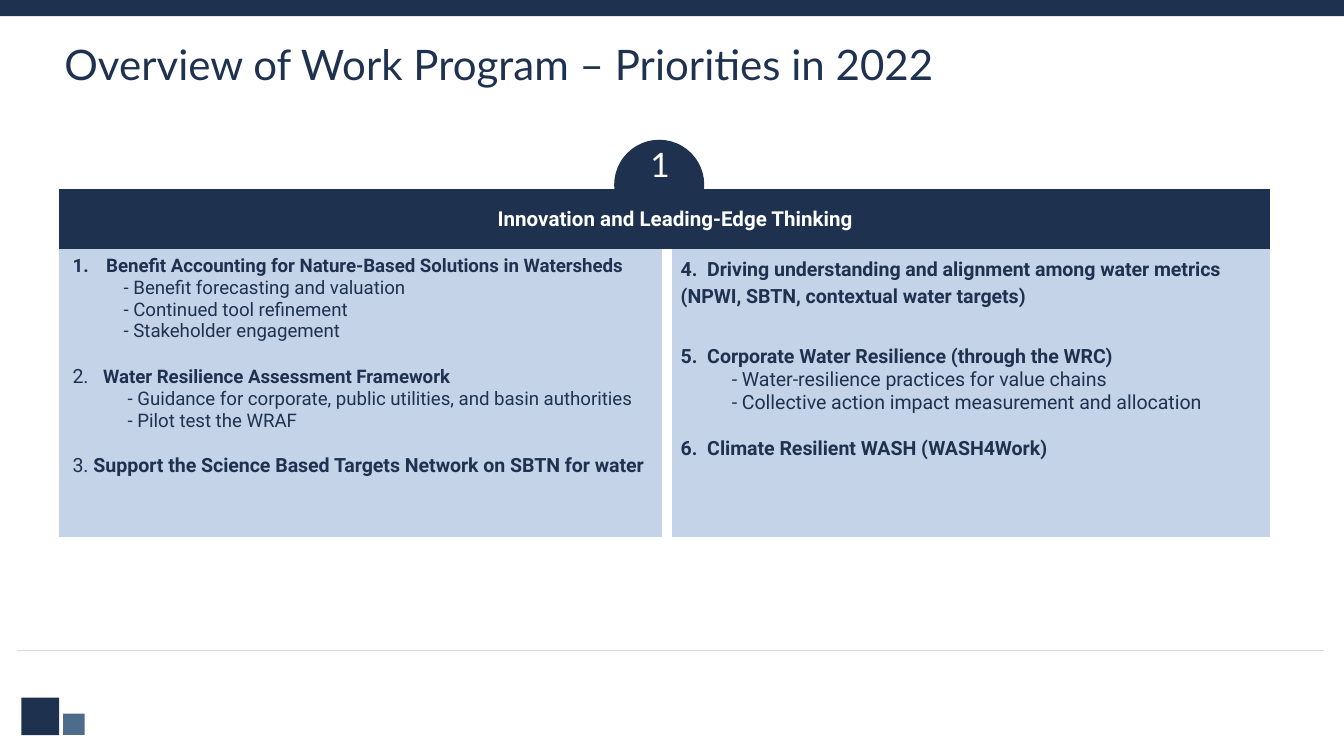
from lxml.etree import SubElement
from pptx import Presentation
from pptx.dml.color import RGBColor
from pptx.enum.shapes import MSO_CONNECTOR, MSO_SHAPE
from pptx.enum.text import MSO_ANCHOR, PP_ALIGN
from pptx.oxml.ns import qn
from pptx.util import Inches, Pt

COLORS = {
    "navy": "1E3250",
    "steel": "4D6B8B",
    "sky": "C5D3E9",
    "rule": "D9D9D9",
    "white": "FFFFFF",
}
GRID_COLUMNS = 100
GRID_ROWS = 56.25
PLAIN_TABLE = "{2D5ABB26-0587-4C30-8999-92F81FD0307C}"

SUBITEM = {"indent": 0.38}
DEEP_SUBITEM = {"indent": 0.41}
AFTER_GAP = {"space_before": 12.3}

LEFT_ITEMS = [
    ([("Benefit Accounting for Nature-Based Solutions in Watersheds", 10, True)],
     {"indent": 0.25, "hanging": 0.25, "numbered": True}),
    ([("- Benefit forecasting and valuation", 10, False)], SUBITEM),
    ([("- Continued tool refinement", 10, False)], SUBITEM),
    ([("- Stakeholder engagement", 10, False)], SUBITEM),
    ([("2.   ", 10.5, False), ("Water Resilience Assessment Framework", 10, True)],
     AFTER_GAP),
    ([("- Guidance for corporate, public utilities, and basin authorities", 10, False)],
     DEEP_SUBITEM),
    ([("- Pilot test the WRAF", 10, False)], DEEP_SUBITEM),
    ([("3. ", 10.5, False),
      ("Support the Science Based Targets Network on SBTN for water", 10.5, True)],
     AFTER_GAP),
]
RIGHT_ITEMS = [
    ([("4.  Driving understanding and alignment among water metrics "
       "(NPWI, SBTN, contextual water targets)", 10.5, True)],
     {"line_spacing": 1.15}),
    ([("5.  Corporate Water Resilience (through the WRC)", 10.5, True)],
     {"space_before": 20.2}),
    ([("- Water-resilience practices for value chains", 10.5, False)], SUBITEM),
    ([("- Collective action impact measurement and allocation", 10.5, False)], SUBITEM),
    ([("6.  Climate Resilient WASH (WASH4Work)", 10.5, True)], AFTER_GAP),
]


def color(name):
    return RGBColor.from_string(COLORS[name])


def apply(target, values):
    for name, value in values.items():
        setattr(target, name, value)


class SlideBuilder:
    def __init__(self, presentation):
        self.column = presentation.slide_width / GRID_COLUMNS
        self.row = presentation.slide_height / GRID_ROWS
        self.slide = presentation.slides.add_slide(presentation.slide_layouts[6])
        self.shapes = self.slide.shapes

    def place(self, left, top, width, height):
        return (round(left * self.column), round(top * self.row),
                round(width * self.column), round(height * self.row))

    def block(self, kind, box, fill):
        shape = self.shapes.add_shape(kind, *self.place(*box))
        shape.shadow.inherit = False
        shape.fill.solid()
        shape.fill.fore_color.rgb = color(fill)
        shape.line.fill.background()

    def rule(self, left, top, width):
        x, y, length, _ = self.place(left, top, width, 0)
        line = self.shapes.add_connector(MSO_CONNECTOR.STRAIGHT, x, y, x + length, y)
        line.line.color.rgb = color("rule")
        line.line.width = Pt(0.75)
        SubElement(line._element.spPr, qn("a:effectLst"))

    def runs(self, paragraph, runs, font, fill):
        for text, size, bold in runs:
            run = paragraph.add_run()
            run.text = text
            apply(run.font, {"name": font, "size": Pt(size), "bold": bold})
            run.font.color.rgb = color(fill)

    def label(self, box, text, size, fill, wrap=True, **paragraph_format):
        frame = self.shapes.add_textbox(*self.place(*box)).text_frame
        apply(frame, {"word_wrap": wrap, "vertical_anchor": MSO_ANCHOR.TOP})
        paragraph = frame.paragraphs[0]
        apply(paragraph, paragraph_format)
        self.runs(paragraph, [(text, size, False)], "Lato", fill)

    def paragraph(self, paragraph, runs, style, fill):
        properties = paragraph._p.get_or_add_pPr()
        properties.set("marL", str(Inches(style.get("indent", 0))))
        properties.set("indent", str(-Inches(style.get("hanging", 0))))
        if style.get("numbered"):
            SubElement(properties, qn("a:buFont"), typeface="+mj-lt")
            SubElement(properties, qn("a:buAutoNum"), type="arabicPeriod")
        apply(paragraph, {
            "alignment": style.get("alignment", PP_ALIGN.LEFT),
            "line_spacing": style.get("line_spacing", 1.0),
            "space_before": Pt(style.get("space_before", 0)),
        })
        self.runs(paragraph, runs, "Roboto", fill)

    def cell(self, cell, items, fill, text_fill, edges, **cell_format):
        properties = cell._tc.get_or_add_tcPr()
        for edge in edges:
            border = SubElement(properties, qn(f"a:ln{edge}"), w=str(Pt(6)))
            solid = SubElement(border, qn("a:solidFill"))
            SubElement(solid, qn("a:srgbClr"), val=COLORS["white"])
        cell.fill.solid()
        cell.fill.fore_color.rgb = color(fill)
        apply(cell, cell_format)
        frame = cell.text_frame
        for index, (runs, style) in enumerate(items):
            paragraph = frame.add_paragraph() if index else frame.paragraphs[0]
            self.paragraph(paragraph, runs, style, text_fill)

    def priorities(self, box, header_rows, heading):
        table = self.shapes.add_table(2, 2, *self.place(*box)).table
        table._tbl.tblPr.find(qn("a:tableStyleId")).text = PLAIN_TABLE
        apply(table, {"first_row": False, "horz_banding": False})
        for row, rows in zip(table.rows, (header_rows, box[3] - header_rows)):
            row.height = round(rows * self.row)
        table.cell(0, 0).merge(table.cell(0, 1))
        header = [([(heading, 11, True)], {"indent": 0.12, "alignment": PP_ALIGN.CENTER})]
        self.cell(table.cell(0, 0), header, "navy", "white", "R",
                  vertical_anchor=MSO_ANCHOR.MIDDLE, margin_left=Inches(0.02),
                  margin_right=Inches(0.02), margin_top=0, margin_bottom=0)
        self.cell(table.cell(0, 1), [], "navy", "white", "R")
        self.cell(table.cell(1, 0), LEFT_ITEMS, "sky", "navy", "RB")
        self.cell(table.cell(1, 1), RIGHT_ITEMS, "sky", "navy", "LRB")


def main():
    presentation = Presentation()
    apply(presentation, {"slide_width": Inches(10), "slide_height": Inches(5.625)})
    builder = SlideBuilder(presentation)
    builder.block(MSO_SHAPE.RECTANGLE, (1.6, 51.9, 2.8, 2.8), "navy")
    builder.block(MSO_SHAPE.RECTANGLE, (4.7, 53.1, 1.6, 1.6), "steel")
    builder.block(MSO_SHAPE.RECTANGLE, (0, 0, GRID_COLUMNS, 1.2), "navy")
    builder.block(MSO_SHAPE.OVAL, (45.7, 10.4, 6.7, 6.7), "navy")
    builder.label((47.4, 10.2, 3.4, 4), "1", 18, "white", wrap=False,
                  alignment=PP_ALIGN.CENTER)
    builder.rule(1.3, 48.4, 97.2)
    builder.priorities((4.4, 14.1, 90.5, 26.2), 4.4, "Innovation and Leading-Edge Thinking")
    builder.label((3.8, 2.8, 90.5, 5), "Overview of Work Program – Priorities in 2022",
                  22.5, "navy", line_spacing=0.9)
    presentation.save("out.pptx")


if __name__ == "__main__":
    main()
